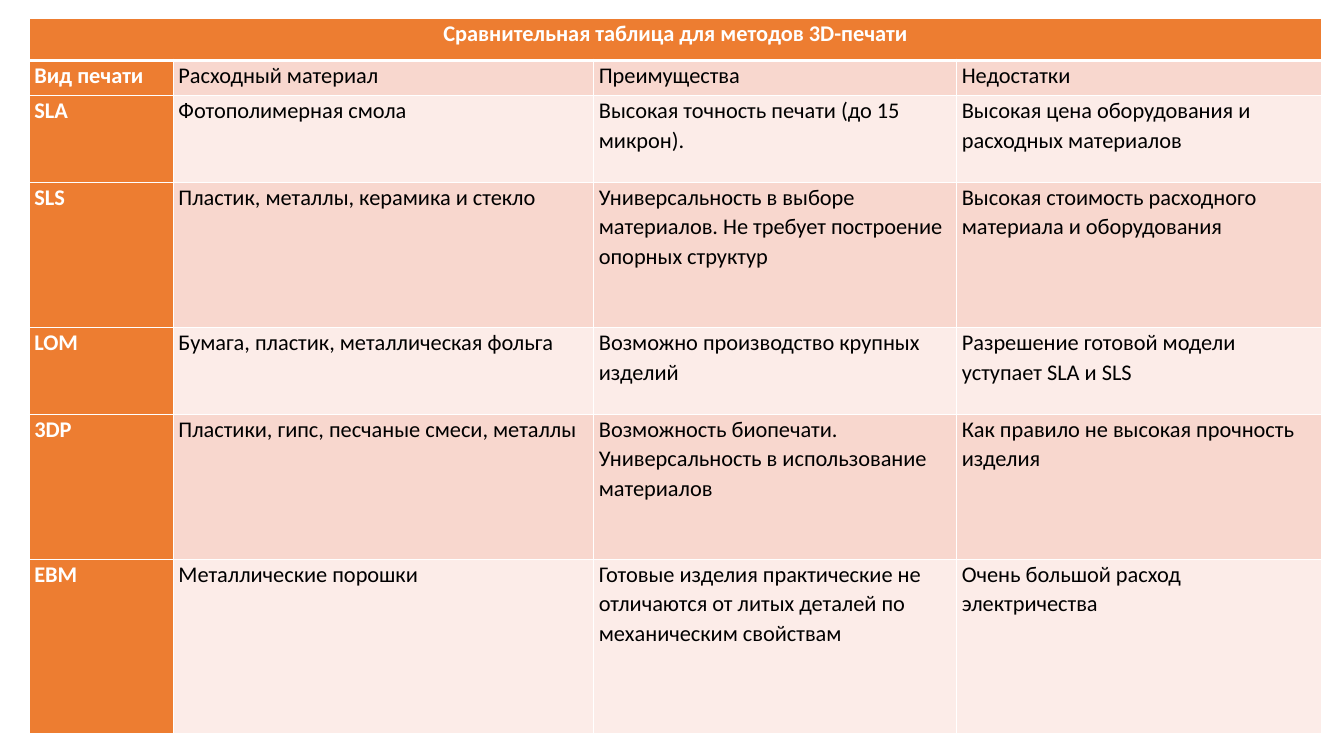
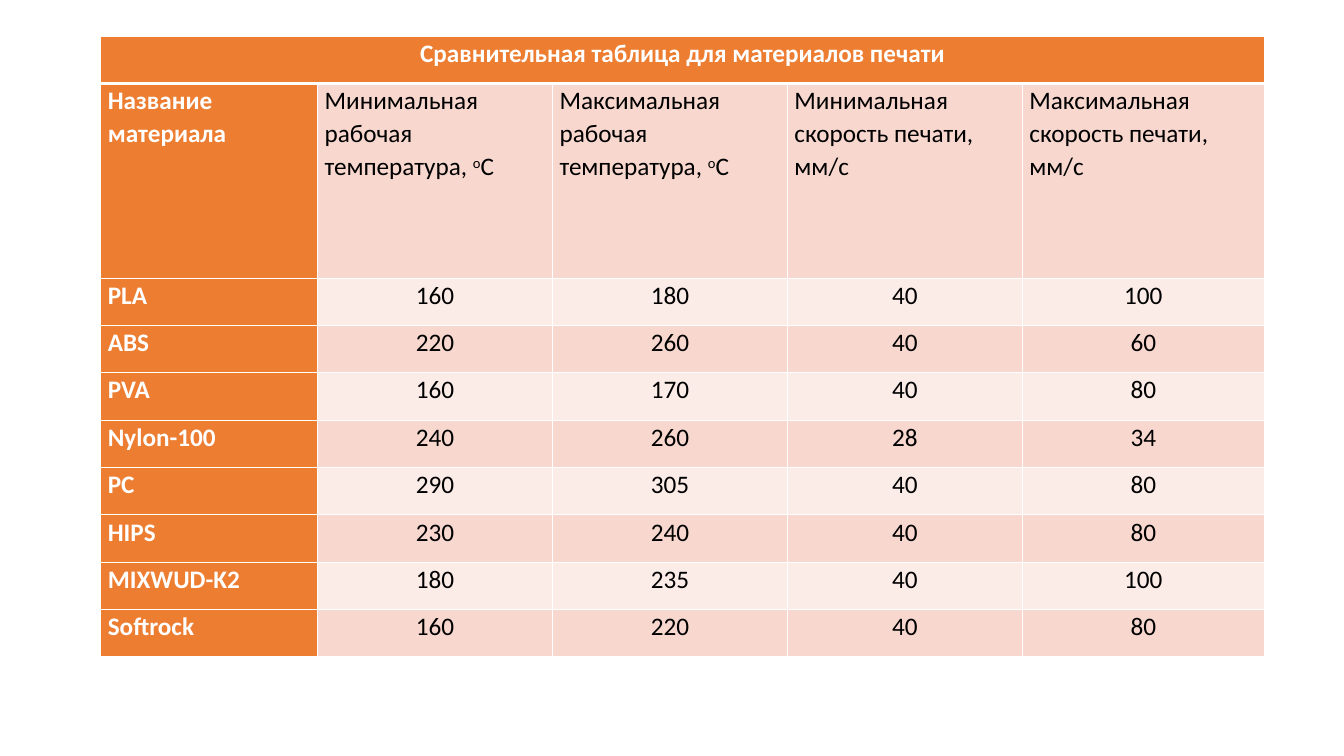
from lxml.etree import SubElement
from pptx import Presentation
from pptx.dml.color import RGBColor
from pptx.enum.text import PP_ALIGN
from pptx.oxml import parse_xml
from pptx.oxml.ns import nsdecls
from pptx.util import Inches, Pt

COLORS = {
    "accent": "ED7D31",
    "band_dark": "F8D7CE",
    "band_light": "FCECE8",
    "light": "FFFFFF",
    "dark": "000000",
}

# Text between two carets is superscript
METHODS = [
    ["Вид печати", "Расходный материал", "Преимущества", "Недостатки"],
    ["SLA", "Фотополимерная смола", "Высокая точность печати (до 15 микрон).",
     "Высокая цена оборудования и расходных материалов"],
    ["SLS", "Пластик, металлы, керамика и стекло",
     "Универсальность в выборе материалов. Не требует построение опорных структур",
     "Высокая стоимость расходного материала и оборудования"],
    ["LOM", "Бумага, пластик, металлическая фольга",
     "Возможно производство крупных изделий",
     "Разрешение готовой модели уступает SLA и SLS"],
    ["3DP", "Пластики, гипс, песчаные смеси, металлы",
     "Возможность биопечати. Универсальность в использование материалов",
     "Как правило не высокая прочность изделия"],
    ["EBM", "Металлические порошки",
     "Готовые изделия практические не отличаются от литых деталей по механическим свойствам",
     "Очень большой расход электричества"],
]

MATERIALS = [
    ["Название материала", "Минимальная рабочая температура, ^о^С",
     "Максимальная рабочая температура, ^о^С",
     "Минимальная скорость печати, мм/с", "Максимальная скорость печати, мм/с"],
    ["PLA", 160, 180, 40, 100],
    ["ABS", 220, 260, 40, 60],
    ["PVA", 160, 170, 40, 80],
    ["Nylon-100", 240, 260, 28, 34],
    ["PC", 290, 305, 40, 80],
    ["HIPS", 230, 240, 40, 80],
    ["MIXWUD-K2", 180, 235, 40, 100],
    ["Softrock", 160, 220, 40, 80],
]


class TableDeck:
    """Holds the shared table style and the current slide."""

    font_name = "Calibri"
    line_spacing = 1.07
    thin, thick = 1, 3

    def __init__(self):
        self.deck = Presentation()
        self.deck.slide_width = Inches(13.33)
        self.deck.slide_height = Inches(7.5)
        self.page = None

    def add_page(self):
        self.page = self.deck.slides.add_slide(self.deck.slide_layouts[6])

    def add_table(self, title, records, left, top, widths, heights, size, inset):
        frame = self.page.shapes.add_table(
            len(heights), len(widths), Inches(left), Inches(top),
            Inches(sum(widths)), Inches(sum(heights)))
        table = frame.table
        for column, width in zip(table.columns, widths):
            column.width = Inches(width)
        for row, height in zip(table.rows, heights):
            row.height = Inches(height)

        # The title spans the whole first row
        table.cell(0, 0).merge(table.cell(0, len(widths) - 1))
        contents = [[title] + [""] * (len(widths) - 1)] + records
        for row_index, record in enumerate(contents):
            for column_index, content in enumerate(record):
                cell = table.cell(row_index, column_index)
                self.style_cell(cell, row_index, column_index, inset)
                centered = row_index == 0 or isinstance(content, int)
                heading = row_index == 0 or column_index == 0
                self.set_cell_text(cell, str(content), size, centered, heading)

    def style_cell(self, cell, row_index, column_index, inset):
        cell.margin_left = cell.margin_right = Inches(inset)
        cell.margin_top = cell.margin_bottom = 0
        if row_index == 0 or column_index == 0:
            fill = "accent"
        else:
            fill = "band_dark" if row_index % 2 else "band_light"
        cell.fill.solid()
        cell.fill.fore_color.rgb = RGBColor.from_string(COLORS[fill])

        # Borders precede the fill; a thick rule sits under the title
        widths = {
            "lnL": self.thin,
            "lnR": self.thin,
            "lnT": self.thick if row_index == 1 else self.thin,
            "lnB": self.thick if row_index == 0 else self.thin,
        }
        properties = cell._tc.get_or_add_tcPr()
        for position, (side, width) in enumerate(widths.items()):
            border = parse_xml(f'<a:{side} {nsdecls("a")} w="{Pt(width)}"><a:solidFill/></a:{side}>')
            SubElement(border[0], border[0].tag.replace("solidFill", "srgbClr"),
                       val=COLORS["light"])
            properties.insert(position, border)

    def set_cell_text(self, cell, text, size, centered, heading):
        para = cell.text_frame.paragraphs[0]
        para.line_spacing = self.line_spacing
        para.alignment = PP_ALIGN.CENTER if centered else PP_ALIGN.LEFT
        para.font.size = Pt(size)
        if not text:
            return
        for index, part in enumerate(text.split("^")):
            span = para.add_run()
            span.text = part
            span.font.name = self.font_name
            span.font.size = Pt(size)
            span.font.bold = heading
            color = COLORS["light" if heading else "dark"]
            span.font.color.rgb = RGBColor.from_string(color)
            if index % 2:
                span._r.get_or_add_rPr().set("baseline", "30000")

    def save(self):
        self.deck.save("out.pptx")


def main():
    tables = TableDeck()

    # Printing methods
    tables.add_page()
    tables.add_table(
        "Сравнительная таблица для методов 3D-печати", METHODS,
        left=0.29, top=0.18, widths=[1.43, 4.17, 3.6, 3.62],
        heights=[0.42, 0.35, 0.86, 1.44, 0.86, 1.44, 1.73], size=16, inset=0.05)

    # Printing materials
    tables.add_page()
    tables.add_table(
        "Сравнительная таблица для материалов печати", MATERIALS,
        left=1, top=0.36, widths=[2.15] + [2.33] * 3 + [2.4],
        heights=[0.47, 1.93] + [0.47] * 8, size=18, inset=0.07)

    tables.save()


if __name__ == "__main__":
    main()
